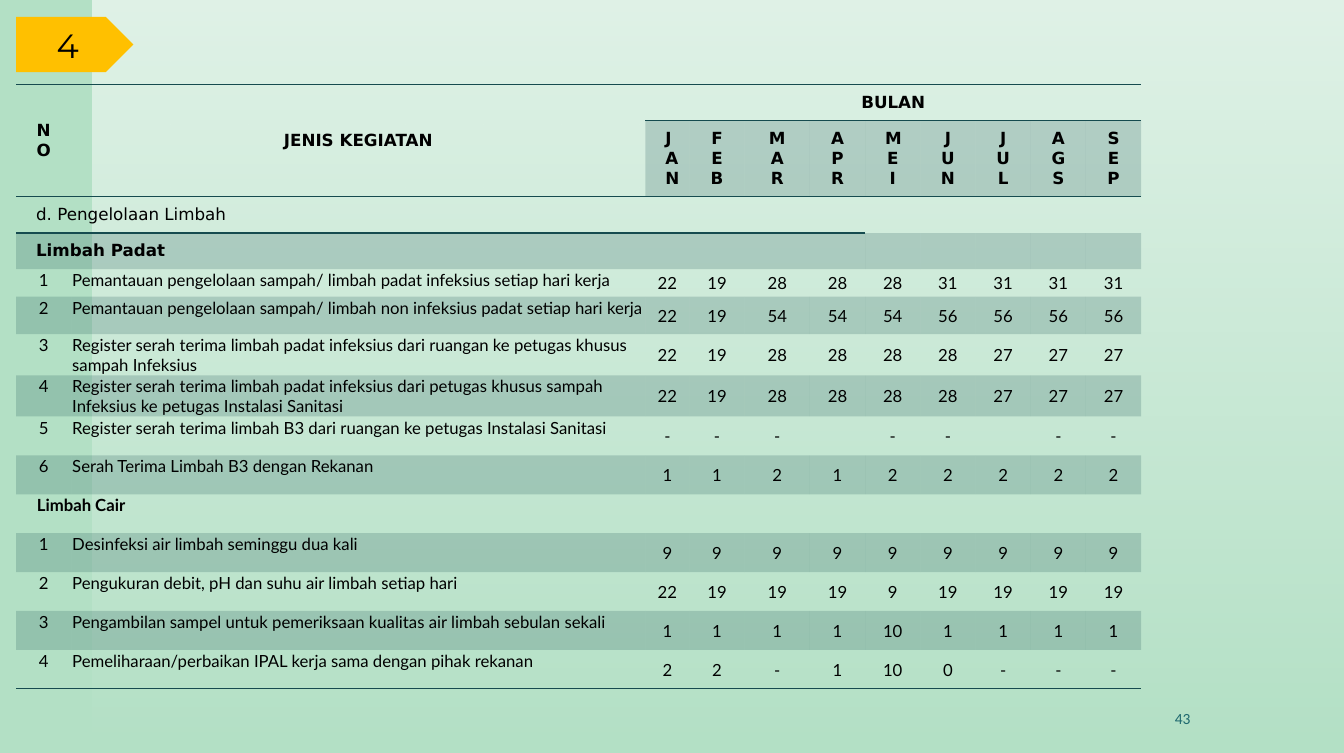
from lxml.etree import SubElement
from pptx import Presentation
from pptx.dml.color import RGBColor
from pptx.enum.shapes import MSO_SHAPE as Shape
from pptx.enum.text import MSO_ANCHOR as Anchor, PP_ALIGN as Align
from pptx.oxml.ns import qn
from pptx.util import Pt

TEAL = "164B4F"
BLACK = "000000"
NO_GRID_STYLE = "{2D5ABB26-0587-4C30-8999-92F81FD0307C}"
HEADING_FONT, ENTRY_FONT = "DejaVu Sans", "Lato"

MONTHS = ["JAN", "FEB", "MAR", "APR", "MEI", "JUN", "JUL", "AGS", "SEP"]
SOLID_WASTE = [
    ("Pemantauan pengelolaan sampah/ limbah padat infeksius setiap hari kerja",
     ["22", "19", "28", "28", "28", "31", "31", "31", "31"]),
    ("Pemantauan pengelolaan sampah/ limbah non infeksius padat setiap hari kerja",
     ["22", "19", "54", "54", "54", "56", "56", "56", "56"]),
    ("Register serah terima limbah padat infeksius dari ruangan ke petugas khusus sampah Infeksius",
     ["22", "19", "28", "28", "28", "28", "27", "27", "27"]),
    ("Register serah terima limbah padat infeksius dari petugas khusus sampah Infeksius "
     "ke petugas Instalasi Sanitasi",
     ["22", "19", "28", "28", "28", "28", "27", "27", "27"]),
    ("Register serah terima limbah B3 dari ruangan ke petugas Instalasi Sanitasi",
     ["-", "-", "-", "", "-", "-", "", "-", "-"]),
    ("Serah Terima Limbah B3 dengan Rekanan",
     ["1", "1", "2", "1", "2", "2", "2", "2", "2"]),
]
LIQUID_WASTE = [
    ("Desinfeksi air limbah seminggu dua kali", ["9"] * 9),
    ("Pengukuran debit, pH dan suhu air limbah setiap hari",
     ["22", "19", "19", "19", "9", "19", "19", "19", "19"]),
    ("Pengambilan sampel untuk pemeriksaan kualitas air limbah sebulan sekali",
     ["1", "1", "1", "1", "10", "1", "1", "1", "1"]),
    ("Pemeliharaan/perbaikan IPAL kerja sama dengan pihak rekanan",
     ["2", "2", "-", "1", "10", "0", "-", "-", "-"]),
]
COLUMN_WIDTHS = [39.6, 411.8, 31, 39.6, 46.8] + [39.6] * 6
ROW_HEIGHTS = [25.1, 53.1, 25.1, 24.4, 19.7, 26.9, 29.4, 29.4] + [27.9] * 7
HEADING_MARGINS = (14.4, 5.76, 14.4, 5.76)
ENTRY_MARGINS = (0.72, 0.72, 0.72, 0)
LIQUID_HEADING_MARGINS = (15, 0.72, 0.72, 0)


def color(hex_string):
    return RGBColor.from_string(hex_string)


def set_opacity(color_node, percent):
    SubElement(color_node, qn("a:alpha"), val=str(percent * 1000))


def write(paragraph, words, size, font, hex_string=BLACK, bold=False, align=Align.CENTER):
    paragraph.alignment = align
    run = paragraph.add_run()
    run.text = words
    run.font.size = Pt(size)
    run.font.name = font
    run.font.bold = bold
    run.font.color.rgb = color(hex_string)


def draw_edge(cell, tag):
    edge = SubElement(cell._tc.get_or_add_tcPr(), qn(tag), w=str(Pt(1)))
    SubElement(SubElement(edge, qn("a:solidFill")), qn("a:srgbClr"), val=TEAL)


def shade(cell):
    cell.fill.solid()
    cell.fill.fore_color.rgb = color(TEAL)
    set_opacity(next(cell.fill._xPr.find(qn("a:solidFill")).iter(qn("a:srgbClr"))), 20)


def fill_cell(cell, words, font=ENTRY_FONT, margins=ENTRY_MARGINS, bold=False,
              align=Align.CENTER, anchor=Anchor.MIDDLE):
    cell.margin_left, cell.margin_top, cell.margin_right, cell.margin_bottom = map(Pt, margins)
    cell.vertical_anchor = anchor
    paragraph = cell.text_frame.paragraphs[0]
    if words:
        write(paragraph, words, 12, font, bold=bold, align=align)
    else:
        SubElement(paragraph._p, qn("a:endParaRPr"), sz="1200")


def add_backdrop(slide, left, top, width, height):
    slide.background.fill.solid()
    slide.background.fill.fore_color.rgb = color("B3E0C5")
    veil = slide.shapes.add_shape(Shape.RECTANGLE, Pt(left), Pt(top), Pt(width), Pt(height))
    veil.shadow.inherit = False
    veil.line.fill.background()
    veil.fill.gradient()
    veil.fill.gradient_angle = 270
    for stop in veil.fill.gradient_stops:
        stop.color.rgb = color("FFFFFF")
    stops = veil._element.spPr.iter(qn("a:srgbClr"))
    for white, opacity in zip(list(stops), (60, 0)):
        set_opacity(white, opacity)


def add_section_tag(slide, left, top, width, height):
    tag = slide.shapes.add_shape(Shape.PENTAGON, Pt(left), Pt(top), Pt(width), Pt(height))
    tag.shadow.inherit = False
    tag.line.fill.background()
    tag.fill.solid()
    tag.fill.fore_color.rgb = color("FFC000")
    tag.text_frame.vertical_anchor = Anchor.MIDDLE
    write(tag.text_frame.paragraphs[0], "4", 24.1, "Montserrat")


def add_page_number(slide, left, top, width, height):
    page = slide.shapes.add_textbox(Pt(left), Pt(top), Pt(width), Pt(height)).text_frame
    page.word_wrap = True
    page.vertical_anchor = Anchor.MIDDLE
    write(page.paragraphs[0], "43", 11.1, "Calibri", "1F696F", align=Align.RIGHT)


def add_activity_table(slide, left, top):
    row_count, column_count = len(ROW_HEIGHTS), len(COLUMN_WIDTHS)
    activities = slide.shapes.add_table(row_count, column_count, Pt(left), Pt(top),
                                        Pt(sum(COLUMN_WIDTHS)), Pt(sum(ROW_HEIGHTS))).table
    activities._tbl.tblPr.find(qn("a:tableStyleId")).text = NO_GRID_STYLE
    activities.first_row = activities.horz_banding = False
    for column, width in zip(activities.columns, COLUMN_WIDTHS):
        column.width = Pt(width)
    for row, height in zip(activities.rows, ROW_HEIGHTS):
        row.height = Pt(height)

    for r in range(row_count):
        for c in range(column_count):
            cell = activities.cell(r, c)
            if r == 0 or (r == 1 and c > 1) or (r == 2 and c < 6):
                draw_edge(cell, "a:lnT")
            if r == row_count - 1:
                draw_edge(cell, "a:lnB")
            if r % 2 and (r > 1 or c > 1):
                shade(cell)
            else:
                cell.fill.background()

    headings = {(0, 0): "NO", (0, 1): "JENIS KEGIATAN", (0, 2): "BULAN"}
    headings.update({(1, c): month for c, month in enumerate(MONTHS, 2)})
    sections = {(2, 0): "d. Pengelolaan Limbah", (3, 0): "Limbah Padat"}
    entries = {}
    for first_row, group in ((4, SOLID_WASTE), (11, LIQUID_WASTE)):
        for number, (activity, counts) in enumerate(group, 1):
            for c, words in enumerate([str(number), activity] + counts):
                entries[first_row + number - 1, c] = words

    for r in range(row_count):
        for c in range(column_count):
            cell = activities.cell(r, c)
            if (r, c) in headings:
                fill_cell(cell, headings[r, c], HEADING_FONT, HEADING_MARGINS, bold=True)
            elif (r, c) in sections:
                fill_cell(cell, sections[r, c], HEADING_FONT, HEADING_MARGINS,
                          bold=r == 3, align=Align.LEFT)
            elif (r, c) == (10, 0):
                fill_cell(cell, "Limbah Cair", margins=LIQUID_HEADING_MARGINS, bold=True,
                          align=Align.LEFT, anchor=Anchor.TOP)
            else:
                fill_cell(cell, entries.get((r, c), ""),
                          align=Align.LEFT if c == 1 else Align.CENTER,
                          anchor=Anchor.TOP if c < 2 else Anchor.MIDDLE)

    for start, end in (((0, 0), (1, 0)), ((0, 1), (1, 1)), ((0, 2), (0, 10)),
                       ((2, 0), (2, 5)), ((3, 0), (3, 5)), ((10, 0), (10, 1))):
        activities.cell(*start).merge(activities.cell(*end))


def main():
    deck = Presentation()
    deck.slide_width, deck.slide_height = Pt(964), Pt(540)
    slide = deck.slides.add_slide(deck.slide_layouts[6])
    add_backdrop(slide, 66.2, 0, 897.8, 540)
    add_page_number(slide, 636.5, 500.4, 224.6, 28.8)
    add_section_tag(slide, 11.5, 12.2, 84.2, 39.6)
    add_activity_table(slide, 11.5, 60.5)
    deck.save("out.pptx")


if __name__ == "__main__":
    main()
